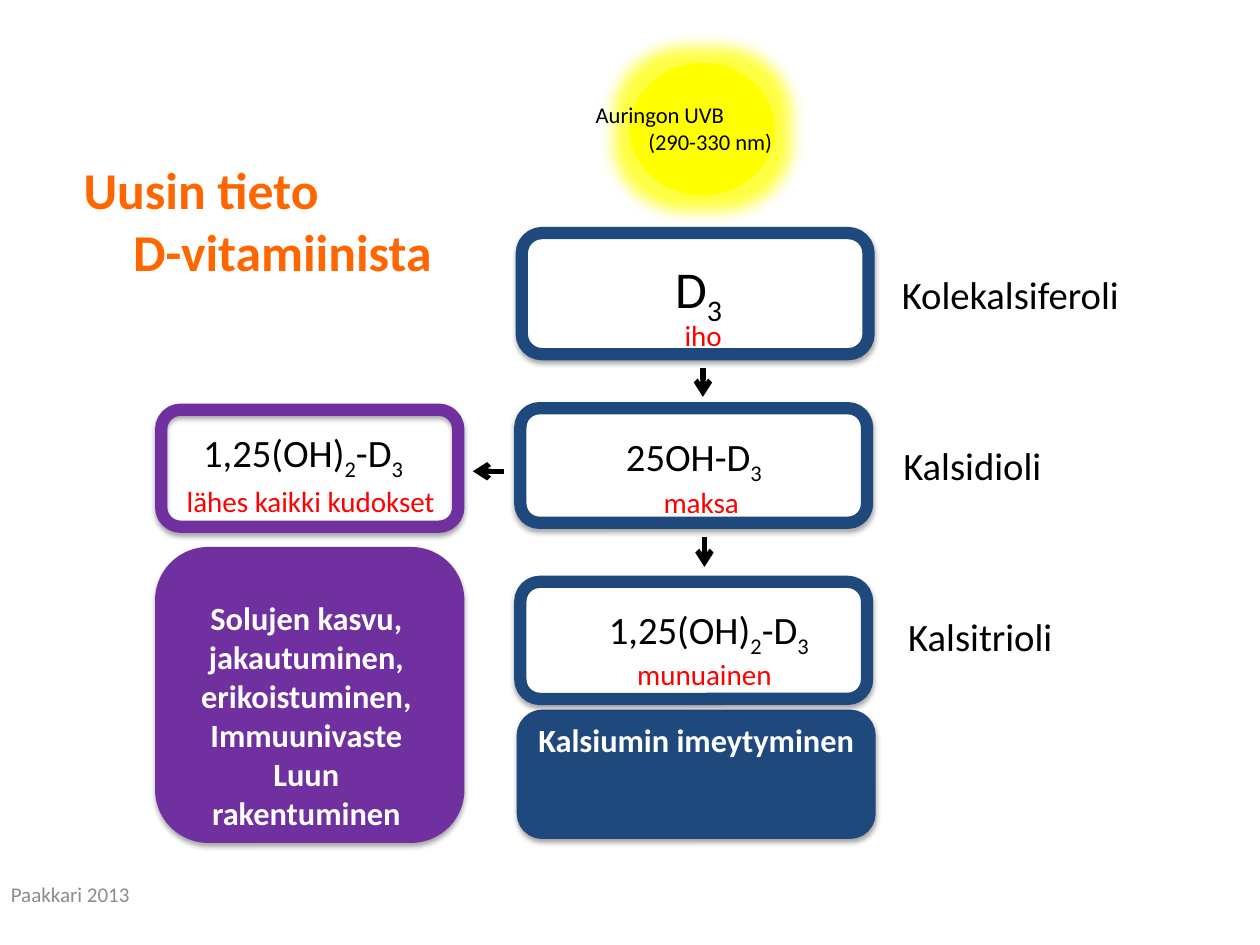
import pptx
import pptx.dml.color
import pptx.enum.shapes
import pptx.enum.text
import pptx.oxml
import pptx.oxml.ns
import pptx.util
from pptx.dml.color import RGBColor
from pptx.util import Cm

NAVY = RGBColor(0x1F, 0x49, 0x7D)
PURPLE = RGBColor(0x70, 0x30, 0xA0)
WHITE = RGBColor(0xFF, 0xFF, 0xFF)
BLACK = RGBColor(0x00, 0x00, 0x00)
RED = RGBColor(0xFF, 0x00, 0x00)
ORANGE = RGBColor(0xFF, 0x66, 0x00)
YELLOW = RGBColor(0xFF, 0xFF, 0x00)
GRAY = RGBColor(0x8C, 0x8C, 0x8C)

LEFT = pptx.enum.text.PP_ALIGN.LEFT
CENTER = pptx.enum.text.PP_ALIGN.CENTER
TOP = pptx.enum.text.MSO_ANCHOR.TOP
MIDDLE = pptx.enum.text.MSO_ANCHOR.MIDDLE

SHADOW = ('<a:outerShdw blurRad="39370" dist="22860" dir="5400000" rotWithShape="0">'
          '<a:srgbClr val="000000"><a:alpha val="35000"/></a:srgbClr></a:outerShdw>')
GLOW = ('<a:glow rad="228600"><a:srgbClr val="FFFF00">'
        '<a:alpha val="75000"/></a:srgbClr></a:glow>')


def set_effect(shape, effect=""):
    """Replace the inherited theme effects with the given effect XML."""
    properties = shape._element.spPr
    for old in properties.findall(pptx.oxml.ns.qn("a:effectLst")):
        properties.remove(old)
    namespace = pptx.oxml.ns.nsdecls("a")
    properties.append(pptx.oxml.parse_xml(
        f"<a:effectLst {namespace}>{effect}</a:effectLst>"))


def write_text(shape, text, size, color=BLACK, bold=False, align=LEFT,
               anchor=TOP, wrap=True, hanging=None):
    """Fill a shape with text; "_" makes the next character a subscript.

    hanging gives the left margin and the first-line indent.
    """
    frame = shape.text_frame
    frame.word_wrap = wrap
    frame.vertical_anchor = anchor
    for number, line in enumerate(text.split("\n")):
        paragraph = frame.paragraphs[0] if number == 0 else frame.add_paragraph()
        paragraph.alignment = align
        paragraph.font.size = pptx.util.Pt(size)
        if hanging:
            properties = paragraph._p.get_or_add_pPr()
            properties.set("marL", str(hanging[0]))
            properties.set("indent", str(hanging[1]))
        first, *rest = line.split("_")
        pieces = [(first, False)]
        for part in rest:
            pieces += [(part[0], True), (part[1:], False)]
        for content, subscript in pieces:
            for index, row in enumerate(content.split("\v")):
                if index:
                    paragraph.add_line_break()
                if not row:
                    continue
                run = paragraph.add_run()
                run.text = row
                run.font.name = "Calibri"
                run.font.size = pptx.util.Pt(size)
                run.font.bold = bold
                run.font.color.rgb = color
                if subscript:
                    run.font._element.set("baseline", "-25000")


def add_label(slide, text, left, top, width, height, size=22.1, **text_format):
    box = slide.shapes.add_textbox(Cm(left), Cm(top), Cm(width), Cm(height))
    write_text(box, text, size, **text_format)


def add_box(slide, left, top, width, height, border, fill=None):
    box = slide.shapes.add_shape(
        pptx.enum.shapes.MSO_SHAPE.ROUNDED_RECTANGLE,
        Cm(left), Cm(top), Cm(width), Cm(height))
    if fill is None:
        box.fill.background()
    else:
        box.fill.solid()
        box.fill.fore_color.rgb = fill
    box.line.color.rgb = border
    box.line.width = pptx.util.Pt(7)
    set_effect(box, SHADOW)


def add_arrow(slide, start_x, start_y, end_x, end_y):
    arrow = slide.shapes.add_connector(
        pptx.enum.shapes.MSO_CONNECTOR.STRAIGHT,
        Cm(start_x), Cm(start_y), Cm(end_x), Cm(end_y))
    arrow.line.color.rgb = BLACK
    arrow.line.width = pptx.util.Pt(3)
    namespace = pptx.oxml.ns.nsdecls("a")
    arrow.line._get_or_add_ln().append(
        pptx.oxml.parse_xml(f'<a:tailEnd {namespace} type="arrow"/>'))
    set_effect(arrow)


def add_sun(slide):
    sun = slide.shapes.add_shape(pptx.enum.shapes.MSO_SHAPE.OVAL,
                                 Cm(12.7), Cm(1.27), Cm(2.92), Cm(2.67))
    sun.fill.solid()
    sun.fill.fore_color.rgb = YELLOW
    sun.line.fill.background()
    set_effect(sun, GLOW)
    add_label(slide, "Auringon UVB\v(290-330 nm)", 11.76, 1.91, 4.83, 1.37,
              size=12.9, hanging=(Cm(1.06), Cm(-1.06)))


def add_title(slide):
    title = slide.shapes.title
    title.left, title.top = Cm(1.27), Cm(1.45)
    title.width, title.height = Cm(8.84), Cm(5.97)
    write_text(title, "Uusin tieto\vD-vitamiinista", 29.5, color=ORANGE, bold=True,
               anchor=MIDDLE, hanging=(Cm(1.16), Cm(-1)))


def main():
    presentation = pptx.Presentation()
    presentation.slide_width = Cm(25.4)
    presentation.slide_height = Cm(19.05)
    slide = presentation.slides.add_slide(presentation.slide_layouts[5])
    add_title(slide)

    add_box(slide, 3.25, 11.15, 5.99, 5.72, PURPLE, PURPLE)
    add_box(slide, 3.25, 8.26, 5.99, 2.36, PURPLE)
    add_box(slide, 10.54, 14.43, 6.99, 2.36, NAVY, NAVY)
    for left, top, height in [(10.52, 4.7, 2.44), (10.49, 8.23, 2.31),
                              (10.49, 11.73, 2.36)]:
        add_box(slide, left, top, 6.99, height, NAVY, WHITE)

    add_arrow(slide, 14.17, 7.42, 14.17, 8)
    add_arrow(slide, 14.2, 10.82, 14.2, 11.43)
    add_arrow(slide, 10.16, 9.5, 9.53, 9.5)

    add_label(slide, "D_3", 13.36, 5.05, 1.83, 1.52, size=29.5)
    add_label(slide, "25OH-D_3", 12.37, 8.61, 3.61, 1.19)
    for left, top in [(11.43, 12.09), (3.25, 8.53)]:
        add_label(slide, "1,25(OH)_2-D_3", left, top, 5.72, 1.19, align=CENTER)

    for text, left, top, width, wrap in [
            ("iho", 12.37, 6.27, 3.61, True),
            ("maksa", 11.38, 9.65, 5.51, True),
            ("munuainen", 10.95, 13.11, 6.5, True),
            ("lähes kaikki kudokset", 3.48, 9.63, 5.56, False)]:
        add_label(slide, text, left, top, width, 0.97, size=16.6, color=RED,
                  align=CENTER, wrap=wrap)

    for text, left, top, width, height in [
            ("Kolekalsiferoli", 17.93, 5.33, 5.94, 1.19),
            ("Kalsidioli", 17.96, 8.79, 4.83, 1.19),
            ("Kalsitrioli", 18.06, 12.22, 5.28, 1.75)]:
        add_label(slide, text, left, top, width, height)

    for text, left, top, width, height in [
            ("Kalsiumin imeytyminen", 10.54, 14.4, 6.99, 1.04),
            ("Solujen kasvu, jakautuminen, erikoistuminen,\nImmuunivaste\n"
             "Luun rakentuminen", 3.61, 11.94, 5.13, 4.98)]:
        add_label(slide, text, left, top, width, height, size=18.5, color=WHITE,
                  bold=True, align=CENTER)

    add_sun(slide)
    add_label(slide, "Paakkari 2013", -0.03, 17.55, 5.92, 0.94, size=12,
              color=GRAY, anchor=MIDDLE)
    presentation.save("out.pptx")


if __name__ == "__main__":
    main()
